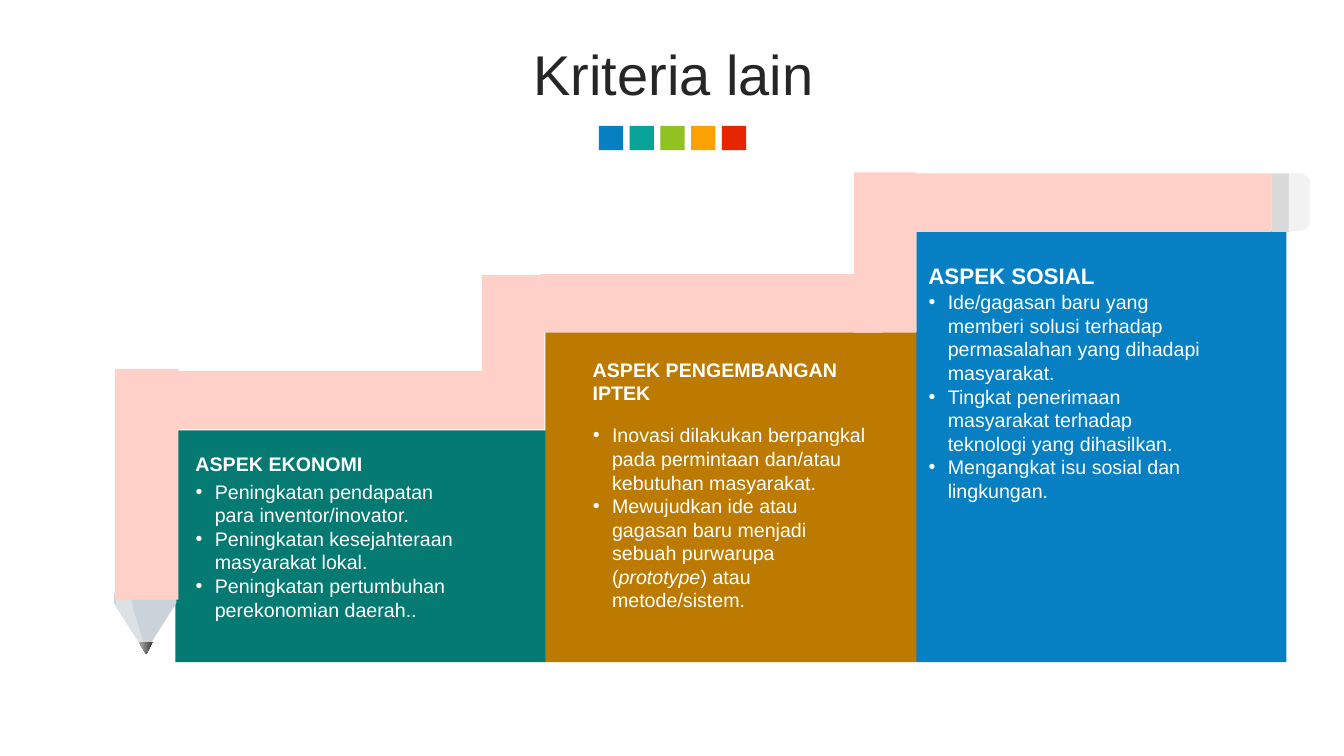
"""Build the slide "Kriteria lain": three criteria on steps under a bent pencil."""
from dataclasses import dataclass
from typing import Any

from lxml import etree
from pptx import Presentation
from pptx.dml.color import RGBColor
from pptx.enum.shapes import MSO_SHAPE
from pptx.enum.text import MSO_ANCHOR, MSO_AUTO_SIZE, PP_ALIGN
from pptx.oxml.ns import qn
from pptx.util import Inches, Pt

RECTANGLE, ROUNDED_END = MSO_SHAPE.RECTANGLE, MSO_SHAPE.ROUND_2_SAME_RECTANGLE
TOP, MIDDLE = MSO_ANCHOR.TOP, MSO_ANCHOR.MIDDLE
LEFT, CENTER = PP_ALIGN.LEFT, PP_ALIGN.CENTER
NO_AUTOFIT = MSO_AUTO_SIZE.NONE
COMPARISON_LAYOUT = 4
TEXT_WIDTH = 2.93
STEP_BOTTOM = 6.57

COLORS = {
    "title": "262626", "text": "FFFFFF", "pencil": "FFD0C7",
    "blue": "0680C3", "teal": "07A398", "green": "90C221",
    "orange": "FBA200", "red": "E62601",
    "dark teal": "057A72", "dark orange": "BC7A00",
    "wood": "CAD2DA", "light wood": "DCE1E6",
    "lead dark": "474747", "lead light": "B0B0B0",
    "ferrule": "D9D9D9", "eraser": "F2F2F2",
}
FRAME_FORMAT = {"word_wrap": True, "auto_size": NO_AUTOFIT, "vertical_anchor": TOP}
PARAGRAPH_FORMAT = {"alignment": LEFT, "space_before": Pt(0), "line_spacing": 1.0}
TITLE_FORMAT = {"alignment": CENTER, "space_before": Pt(0), "line_spacing": 0.9}


@dataclass(frozen=True)
class Box:
    """A rectangle in inches."""
    left: float
    top: float
    width: float
    height: float

    def lengths(self) -> list[int]:
        """Return left, top, width and height as lengths."""
        return [Inches(value) for value in (self.left, self.top, self.width, self.height)]


@dataclass(frozen=True)
class Step:
    """One criterion; bars in the list items enclose italic words."""
    box: Box
    color: str
    heading: str
    heading_box: Box
    heading_size: int
    list_box: Box
    placeholder: int
    items: tuple[str, ...]


STEPS = (
    Step(Box(1.74, 4.27, 3.68, STEP_BOTTOM - 4.27), "dark teal", "ASPEK EKONOMI",
         Box(1.84, 4.43, TEXT_WIDTH, 0.34), 14, Box(1.84, 4.71, TEXT_WIDTH, 1.51), 1,
         ("Peningkatan pendapatan para inventor/inovator.",
          "Peningkatan kesejahteraan masyarakat lokal.",
          "Peningkatan pertumbuhan perekonomian daerah..")),
    Step(Box(5.41, 3.29, 3.69, STEP_BOTTOM - 3.29), "dark orange", "ASPEK PENGEMBANGAN IPTEK",
         Box(5.78, 3.5, TEXT_WIDTH, 0.73), 14, Box(5.78, 4.15, TEXT_WIDTH, 2.52), 2,
         ("Inovasi dilakukan berpangkal pada permintaan dan/atau kebutuhan masyarakat.",
          "Mewujudkan ide atau gagasan baru menjadi sebuah purwarupa "
          "(|prototype|) atau metode/sistem.")),
    Step(Box(9.09, 2.29, 3.67, STEP_BOTTOM - 2.29), "blue", "ASPEK SOSIAL",
         Box(9.11, 2.55, TEXT_WIDTH, 0.37), 16, Box(9.11, 2.83, TEXT_WIDTH, 2.22), 4,
         ("Ide/gagasan baru yang memberi solusi terhadap permasalahan yang dihadapi masyarakat.",
          "Tingkat penerimaan masyarakat terhadap teknologi yang dihasilkan.",
          "Mengangkat isu sosial dan lingkungan.")),
)
PENCIL_BARS = (
    Box(1.14, 3.66, 0.63, 2.29), Box(1.76, 3.68, 3.39, 0.58),
    Box(4.78, 2.73, 0.62, 1.53), Box(5.36, 2.72, 3.39, 0.58),
    Box(8.47, 1.71, 0.62, 1.59), Box(9.03, 1.72, 3.58, 0.58),
)
WOOD = ((1.13, 5.89), (1.75, 5.89), (1.75, 5.98), (1.44, 6.47), (1.13, 5.98))
LIGHT_WOOD = ((1.15, 5.93), (1.31, 5.93), (1.31, 6), (1.46, 6.5), (1.15, 6.02))
LEAD = ((1.38, 6.37), (1.52, 6.37), (1.45, 6.49))


def apply_format(target: Any, values: dict[str, Any]) -> None:
    """Set every named attribute on the target."""
    for name, value in values.items():
        setattr(target, name, value)


def paint(shape: Any, color: str) -> None:
    """Give a shape a plain fill without line or shadow."""
    shape.shadow.inherit = False
    shape.line.fill.background()
    shape.fill.solid()
    shape.fill.fore_color.rgb = RGBColor.from_string(COLORS[color])


def add_block(slide: Any, box: Box, color: str, kind: Any = RECTANGLE) -> Any:
    """Add a painted preset shape."""
    shape = slide.shapes.add_shape(kind, *box.lengths())
    paint(shape, color)
    return shape


def add_outline(slide: Any, points: tuple, color: str) -> Any:
    """Add a painted closed polygon."""
    corners = [(Inches(x), Inches(y)) for x, y in points]
    builder = slide.shapes.build_freeform(*corners[0])
    builder.add_line_segments(corners[1:], close=True)
    shape = builder.convert_to_shape()
    paint(shape, color)
    return shape


def add_run(paragraph: Any, text: str, size: int, color: str = "text",
            bold: bool = False, italic: bool = False) -> None:
    """Add a formatted run to a paragraph."""
    run = paragraph.add_run()
    run.text = text
    apply_format(run.font, {"name": "Arial", "size": Pt(size), "bold": bold, "italic": italic})
    run.font.color.rgb = RGBColor.from_string(COLORS[color])


def place(shape: Any, box: Box) -> None:
    """Move a placeholder to a box and bring it to the front."""
    apply_format(shape, dict(zip(("left", "top", "width", "height"), box.lengths())))
    shape.element.getparent().append(shape.element)


def add_title(slide: Any) -> None:
    """Fill the title placeholder."""
    title = slide.shapes.title
    place(title, Box(0.35, 0.37, 12.66, 0.79))
    apply_format(title.text_frame, FRAME_FORMAT | {"vertical_anchor": MIDDLE})
    paragraph = title.text_frame.paragraphs[0]
    apply_format(paragraph, TITLE_FORMAT)
    add_run(paragraph, "Kriteria lain", 40, "title")


def add_step(slide: Any, step: Step) -> None:
    """Add a step with its heading and bulleted list."""
    add_block(slide, step.box, step.color)
    body = slide.placeholders[step.placeholder]
    place(body, step.list_box)
    apply_format(body.text_frame, FRAME_FORMAT)
    for index, item in enumerate(step.items):
        paragraph = body.text_frame.add_paragraph() if index else body.text_frame.paragraphs[0]
        properties = paragraph._p.get_or_add_pPr()
        properties.set("marL", str(Inches(0.19)))
        properties.set("indent", str(-Inches(0.19)))
        etree.SubElement(properties, qn("a:buFont")).set("typeface", "Arial")
        etree.SubElement(properties, qn("a:buChar")).set("char", "•")
        apply_format(paragraph, PARAGRAPH_FORMAT)
        for part, text in enumerate(item.split("|")):
            add_run(paragraph, text, 14, italic=part % 2 == 1)
    heading = slide.shapes.add_textbox(*step.heading_box.lengths())
    apply_format(heading.text_frame, FRAME_FORMAT)
    add_run(heading.text_frame.paragraphs[0], step.heading, step.heading_size, bold=True)


def add_pencil(slide: Any) -> None:
    """Add the tip, the eraser end and the bent body of the pencil."""
    add_outline(slide, WOOD, "wood")
    add_outline(slide, LIGHT_WOOD, "light wood")
    lead = add_outline(slide, LEAD, "lead dark")
    lead.fill.gradient()
    lead.fill.gradient_angle = 180
    for stop, position, color in zip(lead.fill.gradient_stops, (0.15, 1), ("lead dark", "lead light")):
        stop.position = position
        stop.color.rgb = RGBColor.from_string(COLORS[color])
    add_block(slide, Box(12.61, 1.72, 0.18, 0.58), "ferrule")
    eraser = add_block(slide, Box(12.6, 1.9, 0.57, 0.21), "eraser", ROUNDED_END)
    eraser.rotation = 90
    eraser.adjustments[0] = 0.5
    for bar in PENCIL_BARS:
        add_block(slide, bar, "pencil")


def main() -> None:
    """Build and save the presentation."""
    presentation = Presentation()
    presentation.slide_width, presentation.slide_height = Inches(13.33), Inches(7.5)
    slide = presentation.slides.add_slide(presentation.slide_layouts[COMPARISON_LAYOUT])
    for index, color in enumerate(("blue", "teal", "green", "orange", "red")):
        add_block(slide, Box(5.94 + 1.22 * index / 4, 1.25, 0.24, 0.24), color)
    add_title(slide)
    for step in STEPS:
        add_step(slide, step)
    unused = slide.placeholders[3].element
    unused.getparent().remove(unused)
    add_pencil(slide)
    presentation.save("out.pptx")


if __name__ == "__main__":
    main()
